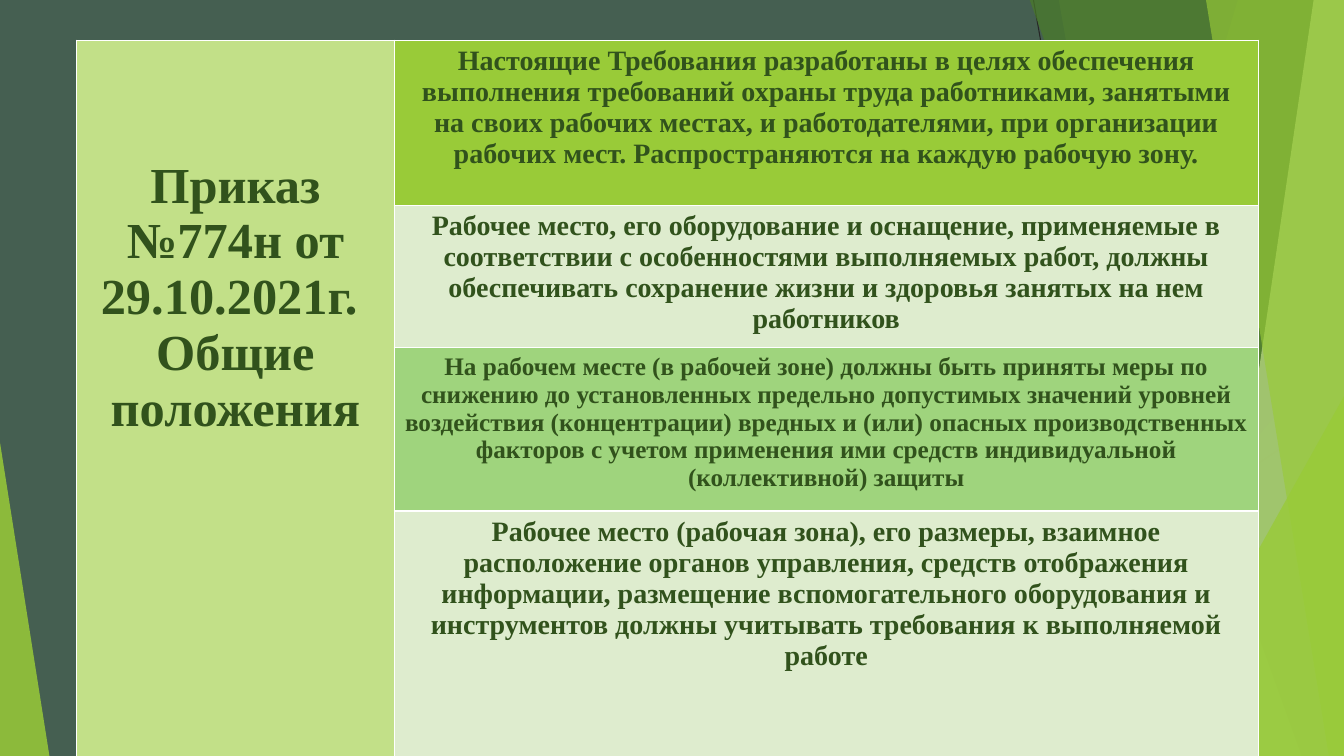
import pptx
import pptx.dml.color
import pptx.enum.shapes
import pptx.enum.text
import pptx.oxml
import pptx.oxml.ns
import pptx.util

PX = 9144  # EMU in one px, 100 px to the inch
WIDTH, HEIGHT = 1333, 750
FONT = "Times New Roman"
COLORS = {
    "background": "455F51", "line": "262626", "border": "FFFFFF", "text": "31521C",
    "lime": "99CB38", "green": "63A537", "dark": "4A7C29", "light": "C2E088",
    "pale": "DEECCE", "mint": "9FD47D",
}

# Outlines: top-left x, top-right x, bottom-right x, bottom-left x, color, opacity
FACETS = [
    (1228, WIDTH, WIDTH, 1004, "lime", 30),
    (1050, WIDTH, WIDTH, 1183, "lime", 20),
    (1021, WIDTH, WIDTH, 1291, "dark", 70),
    (1303, WIDTH, WIDTH, 1192, "light", 70),
    (1196, WIDTH, WIDTH, 1318, "lime", 65),
]

# Table content
HEADING = ["Приказ №774н от 29.10.2021г. ", "Общие положения"]
RULES = [  # text, size, fill, row height
    ("Настоящие Требования разработаны в целях обеспечения выполнения требований охраны "
     "труда работниками, занятыми на своих рабочих местах, и работодателями, при "
     "организации рабочих мест. Распространяются на каждую рабочую зону.",
     20, "lime", 164),
    ("Рабочее место, его оборудование и оснащение, применяемые в соответствии с "
     "особенностями выполняемых работ, должны обеспечивать сохранение жизни и здоровья "
     "занятых на нем работников",
     20, "pale", 141),
    ("На рабочем месте (в рабочей зоне) должны быть приняты меры по снижению до "
     "установленных предельно допустимых значений уровней воздействия (концентрации) "
     "вредных и (или) опасных производственных факторов с учетом применения ими средств "
     "индивидуальной (коллективной) защиты",
     18, "mint", 162),
    ("Рабочее место (рабочая зона), его размеры, взаимное расположение органов "
     "управления, средств отображения информации, размещение вспомогательного "
     "оборудования и инструментов должны учитывать требования к выполняемой работе",
     20, "pale", 162),
]


def px(*lengths):
    return [length * PX for length in lengths]


def rgb(name):
    return pptx.dml.color.RGBColor.from_string(COLORS[name])


def paint(shape, color, opacity):
    shape.shadow.inherit = False
    shape.line.fill.background()
    shape.fill.solid()
    shape.fill.fore_color.rgb = rgb(color)
    tone = shape.fill._xPr.find(".//" + pptx.oxml.ns.qn("a:srgbClr"))
    alpha = pptx.oxml.parse_xml(
        f'<a:alpha {pptx.oxml.ns.nsdecls("a")} val="{opacity * 1000}"/>')
    tone.append(alpha)


def add_line(page, *ends):
    line = page.shapes.add_connector(
        pptx.enum.shapes.MSO_CONNECTOR.STRAIGHT, *px(*ends))
    line.line.color.rgb = rgb("line")
    line.line.width = pptx.util.Pt(0.75)
    line._element.spPr.append(
        pptx.oxml.parse_xml(f'<a:effectLst {pptx.oxml.ns.nsdecls("a")}/>'))


def add_facet(page, top_left, top_right, bottom_right, bottom_left, color, opacity):
    outline = page.shapes.build_freeform(top_left, -1, scale=PX)
    outline.add_line_segments(
        [(top_right, -1), (bottom_right, HEIGHT), (bottom_left, HEIGHT)], close=True)
    paint(outline.convert_to_shape(), color, opacity)


def add_triangle(page, left, top, width, height, apex, color, opacity):
    triangle = page.shapes.add_shape(
        pptx.enum.shapes.MSO_SHAPE.ISOSCELES_TRIANGLE, *px(left, top, width, height))
    triangle.adjustments[0] = apex
    paint(triangle, color, opacity)


def add_borders(cell):
    properties = cell._tc.get_or_add_tcPr()
    for index, side in enumerate(("lnL", "lnR", "lnT", "lnB")):
        properties.insert(index, pptx.oxml.parse_xml(
            f'<a:{side} {pptx.oxml.ns.nsdecls("a")} w="12700"><a:solidFill>'
            f'<a:srgbClr val="{COLORS["border"]}"/></a:solidFill></a:{side}>'))


def fill_cell(cell, lines, size, color):
    cell.fill.solid()
    cell.fill.fore_color.rgb = rgb(color)
    look = {"name": FONT, "size": pptx.util.Pt(size), "bold": True}
    for index, line in enumerate(lines):
        frame = cell.text_frame
        para = frame.add_paragraph() if index else frame.paragraphs[0]
        para.alignment = pptx.enum.text.PP_ALIGN.CENTER
        span = para.add_run()
        span.text = line
        for name, value in look.items():
            setattr(span.font, name, value)
        span.font.color.rgb = rgb("text")


def add_rules_table(page):
    height = sum(rule[-1] for rule in RULES)
    table = page.shapes.add_table(len(RULES), 2, *px(76, 40, 1172, height)).table
    for name in ("first_row", "horz_banding"):
        setattr(table, name, False)
    for column, width in zip(table.columns, px(315, 857)):
        column.width = width
    for index, (text, size, color, row_height) in enumerate(RULES):
        table.rows[index].height = row_height * PX
        fill_cell(table.cell(index, 1), [text], size, color)
    heading = table.cell(0, 0)
    heading.merge(table.cell(len(RULES) - 1, 0))
    heading.margin_top = 117 * PX
    fill_cell(heading, HEADING, 36, "light")
    for cell in table.iter_cells():
        add_borders(cell)


def main():
    deck = pptx.Presentation()
    deck.slide_width, deck.slide_height = px(WIDTH, HEIGHT)
    page = deck.slides.add_slide(deck.slide_layouts[6])
    page.background.fill.solid()
    page.background.fill.fore_color.rgb = rgb("background")

    # Faceted backdrop
    add_line(page, 1025, 0, 1158, HEIGHT)
    add_line(page, WIDTH, 403, 812, HEIGHT)
    for facet in FACETS[:2]:
        add_facet(page, *facet)
    add_triangle(page, 977, 333, 356, 417, 1, "green", 72)
    for facet in FACETS[2:]:
        add_facet(page, *facet)
    add_triangle(page, 1134, 393, 199, 357, 1, "lime", 80)
    add_triangle(page, 0, 439, 49, 311, 0, "lime", 85)

    # General provisions
    add_rules_table(page)
    deck.save("out.pptx")


if __name__ == "__main__":
    main()
